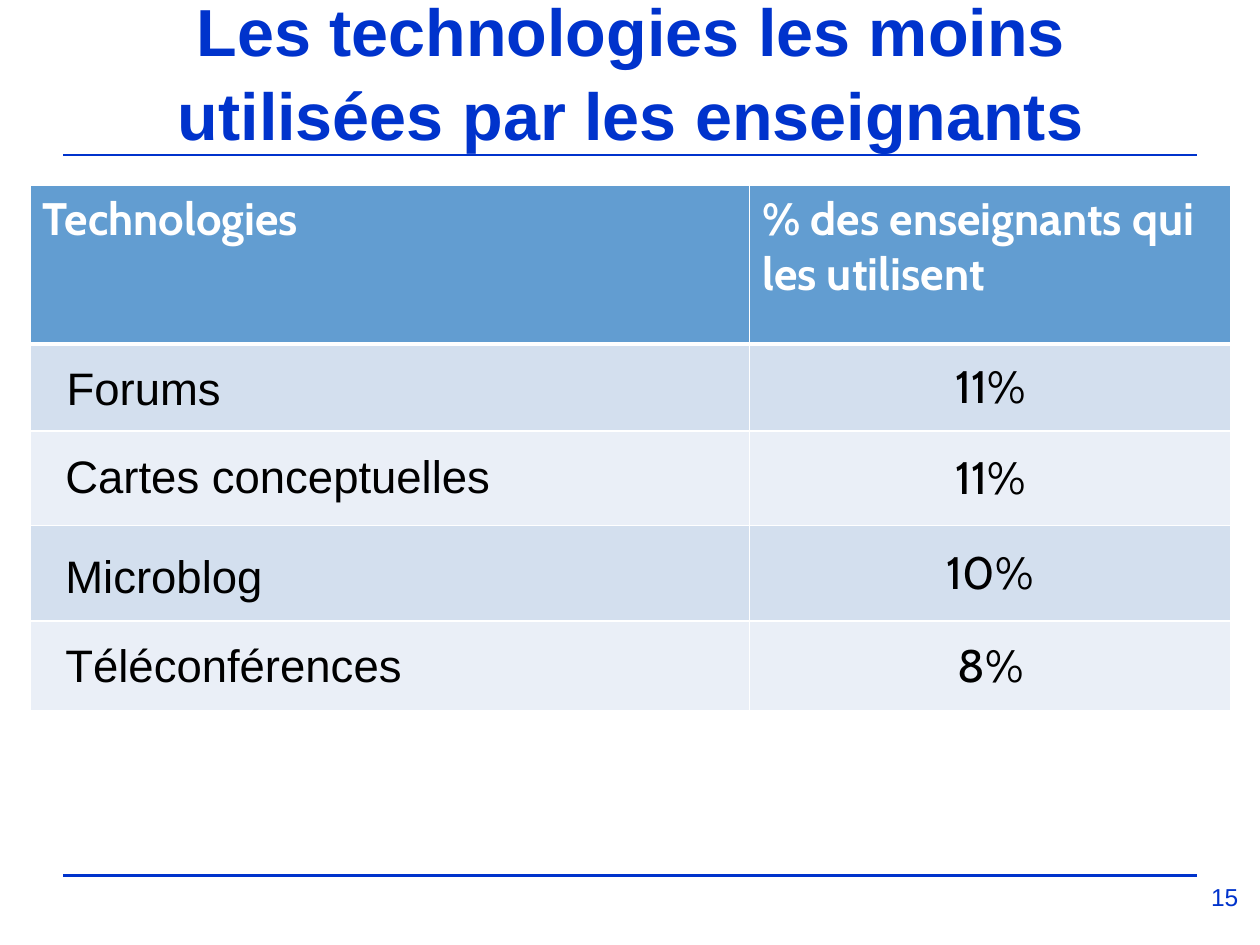
"""Build the slide on the technologies teachers use least."""
from lxml import etree
from pptx import Presentation
from pptx.dml.color import RGBColor
from pptx.enum.shapes import MSO_CONNECTOR
from pptx.enum.text import MSO_ANCHOR, MSO_AUTO_SIZE, PP_ALIGN
from pptx.oxml.ns import qn
from pptx.util import Inches, Pt

TITLE = "Les technologies les moins utilisées par les enseignants"
HEADERS = ["Technologies", "% des enseignants qui les utilisent"]
ROWS = [
    ("Forums", "11%", 0.43, 2.81, 1.44),
    ("Cartes conceptuelles", "11%", 0.42, 3.51, 3.61),
    ("Microblog", "10%", 0.42, 4.3, 1.8),
    ("Téléconférences", "8%", 0.42, 5.01, 2.9),
]
PAGE = "15"
RULES = [1.23, 6.95]
COL_WIDTHS = [5.71, 3.82]
ROW_HEIGHTS = [1.26, 0.69, 0.75, 0.76, 0.71]
THEME = {
    "blue": "0033CC", "white": "FFFFFF", "black": "000000",
    "header": "629DD1", "bands": ["D3DFEE", "EAEFF7"],
    "sans": "Arial", "table": "Cabin",
    "title_size": 38, "body_size": 26, "page_size": 14,
}


def style(p, size, font, color, bold=False, align=PP_ALIGN.LEFT):
    p.alignment = align
    for r in p.runs:
        r.font.size = Pt(size)
        r.font.name = font
        r.font.bold = bold
        r.font.color.rgb = RGBColor.from_string(color)


def add_rule(s, y):
    line = s.shapes.add_connector(
        MSO_CONNECTOR.STRAIGHT, Inches(0.5), Inches(y), Inches(9.5), Inches(y))
    line.line.color.rgb = RGBColor.from_string(THEME["blue"])
    line.line.width = Pt(1.5)
    etree.SubElement(line._element.spPr, qn("a:effectLst"))


def add_text(s, text, box, size, color, align=PP_ALIGN.LEFT, wrap=True):
    tf = s.shapes.add_textbox(*map(Inches, box)).text_frame
    tf.word_wrap = wrap
    tf.auto_size = MSO_AUTO_SIZE.NONE if wrap else MSO_AUTO_SIZE.SHAPE_TO_FIT_TEXT
    tf.text = text
    style(tf.paragraphs[0], size, THEME["sans"], color, align=align)


def set_borders(cell, widths):
    tc_pr = cell._tc.get_or_add_tcPr()
    for i, (side, width) in enumerate(widths.items()):
        ln = etree.Element(qn(f"a:ln{side}"), w=str(Pt(width)))
        fill = etree.SubElement(ln, qn("a:solidFill"))
        etree.SubElement(fill, qn("a:srgbClr"), val=THEME["white"])
        tc_pr.insert(i, ln)


def add_usage_table(s):
    box = (0.24, 1.47, sum(COL_WIDTHS), sum(ROW_HEIGHTS))
    table = s.shapes.add_table(
        len(ROW_HEIGHTS), len(COL_WIDTHS), *map(Inches, box)).table
    table.horz_banding = False
    for col, width in zip(table.columns, COL_WIDTHS):
        col.width = Inches(width)
    for row, height in zip(table.rows, ROW_HEIGHTS):
        row.height = Inches(height)
    values = [HEADERS] + [("", share) for _, share, *_ in ROWS]
    for i, texts in enumerate(values):
        head = i == 0
        fill = THEME["header"] if head else THEME["bands"][(i - 1) % 2]
        for j, text in enumerate(texts):
            cell = table.cell(i, j)
            cell.fill.solid()
            cell.fill.fore_color.rgb = RGBColor.from_string(fill)
            set_borders(cell, {"L": 1, "R": 1, "T": 3 if i == 1 else 1,
                               "B": 3 if head else 1})
            if text:
                cell.text = text
                cell.vertical_anchor = MSO_ANCHOR.TOP if head else MSO_ANCHOR.MIDDLE
                style(cell.text_frame.paragraphs[0], THEME["body_size"],
                      THEME["table"], THEME["white" if head else "black"], head,
                      PP_ALIGN.LEFT if head else PP_ALIGN.CENTER)


def main():
    prs = Presentation()
    prs.slide_width, prs.slide_height = Inches(10), Inches(7.5)
    s = prs.slides.add_slide(prs.slide_layouts[5])

    title = s.shapes.title
    title.left, title.top, title.width, title.height = map(
        Inches, (0.51, 0.52, 9, 0.75))
    tf = title.text_frame
    tf.text = TITLE
    tf.word_wrap = True
    tf.auto_size = MSO_AUTO_SIZE.NONE
    tf.vertical_anchor = MSO_ANCHOR.BOTTOM
    p = tf.paragraphs[0]
    p.line_spacing = 1.05
    style(p, THEME["title_size"], THEME["sans"], THEME["blue"], True,
          PP_ALIGN.CENTER)

    for y in RULES:
        add_rule(s, y)
    add_text(s, PAGE, (9.44, 6.95, 0.56, 0.42), THEME["page_size"],
             THEME["blue"], PP_ALIGN.CENTER)
    add_usage_table(s)
    for label, _, x, y, width in ROWS:
        add_text(s, label, (x, y, width, 0.54), THEME["body_size"],
                 THEME["black"], wrap=False)
    prs.save("out.pptx")


if __name__ == "__main__":
    main()
